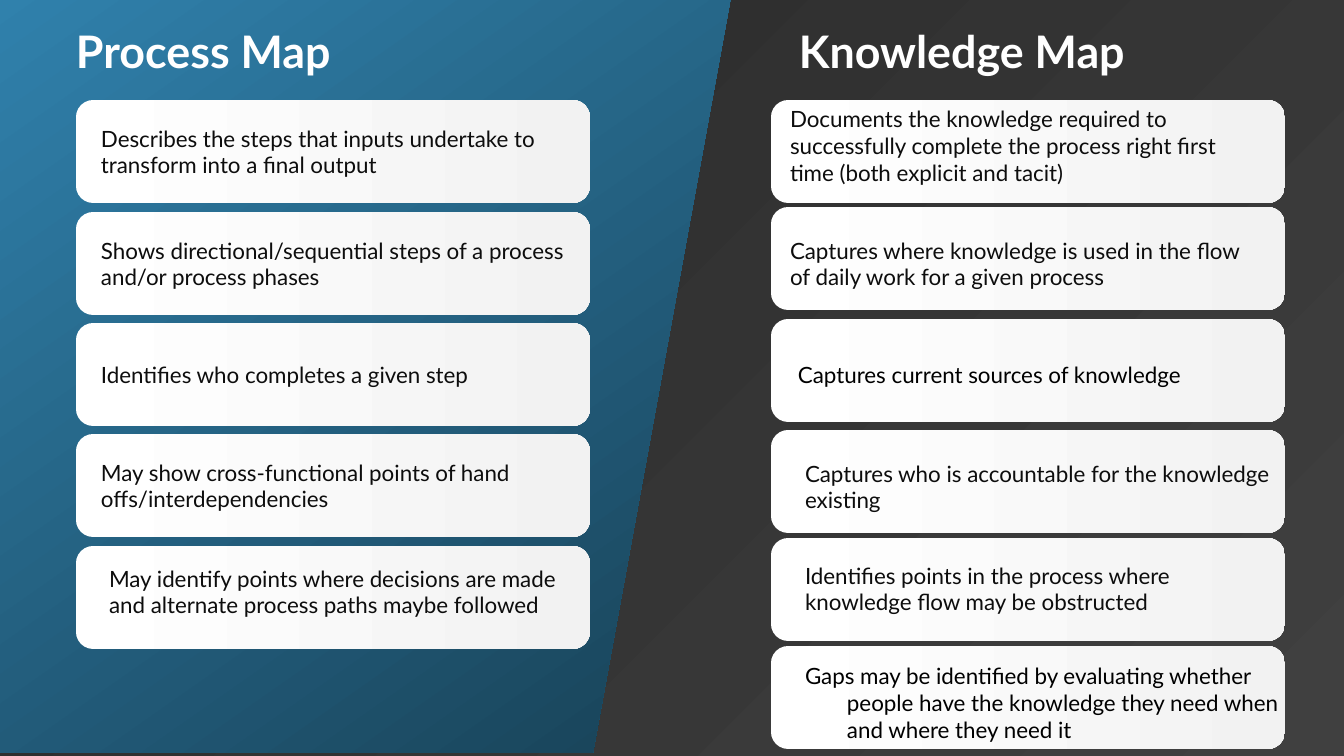
from pptx import Presentation
from pptx.dml.color import RGBColor
from pptx.enum.shapes import MSO_SHAPE
from pptx.enum.text import MSO_ANCHOR, MSO_AUTO_SIZE, PP_ALIGN
from pptx.util import Emu, Pt

ROUNDED = MSO_SHAPE.ROUNDED_RECTANGLE
MIDDLE = MSO_ANCHOR.MIDDLE
NO_AUTOFIT = MSO_AUTO_SIZE.NONE
LEFT, RIGHT = PP_ALIGN.LEFT, PP_ALIGN.RIGHT

WHITE = RGBColor(0xFF, 0xFF, 0xFF)
PALE_GREY = RGBColor(0xF2, 0xF2, 0xF2)
BLACK = RGBColor(0x00, 0x00, 0x00)
INK = RGBColor(0x0D, 0x0D, 0x0D)
CHARCOAL = RGBColor(0x26, 0x26, 0x26)
GREY = RGBColor(0x40, 0x40, 0x40)
BLUE = RGBColor(0x30, 0x81, 0xAC)
NAVY = RGBColor(0x18, 0x41, 0x56)

FONT = "Lato"
PX = 914400 / 100.8
SLIDE_W, SLIDE_H = 1344, 756
CARD_W, CARD_H = 514, 103
STATEMENT_H = 61
HANGING = 42

PROCESS_PITCH = 111.5
PROCESS_STATEMENTS = [
    (25, 21, 466, "Describes the steps that inputs undertake to transform into a final output"),
    (25, 21, 466, "Shows directional/sequential steps of a process and/or process phases"),
    (25, 21, 466, "Identifies who completes a given step"),
    (25, 21, 475, "May show cross-functional points of hand offs/interdependencies"),
    (33, 15, 475, "May identify points where decisions are made and alternate process paths maybe followed"),
]
PROCESS_CARDS = [
    (round(PROCESS_PITCH * row), *statement, False)
    for row, statement in enumerate(PROCESS_STATEMENTS)
]
KNOWLEDGE_CARDS = [
    (0, 19, 15, 475, "Documents the knowledge required to successfully complete the process "
     "right first time (both explicit and tacit)", False),
    (107, 19, 26, 475, "Captures where knowledge is used in the flow of daily work for a given process", False),
    (219, 27, 25, 475, "Captures current sources of knowledge", True),
    (330, 34, 26, 475, "Captures who is accountable for the knowledge existing", False),
    (438, 34, 20, 475, "Identifies points in the process where knowledge flow may be obstructed", False),
    (546, 34, 26, 475, "Gaps may be identified by evaluating whether people have the knowledge "
     "they need when and where they need it", True),
]


def px(length):
    return Emu(round(length * PX))


def box_of(*lengths):
    return [px(length) for length in lengths]


def shade(fill, first, last, clockwise, start=0):
    fill.gradient()
    fill.gradient_angle = (360 - clockwise) % 360
    for stop, color, position in zip(fill.gradient_stops, (first, last), (start, 1)):
        stop.color.rgb = color
        stop.position = position


def write(holder, text, size=16, color=INK, bold=False, align=LEFT, hanging=0):
    frame = holder.text_frame
    frame.word_wrap = True
    frame.auto_size = NO_AUTOFIT
    frame.vertical_anchor = MIDDLE
    frame.margin_left = frame.margin_right = frame.margin_top = frame.margin_bottom = 0
    paragraph = frame.paragraphs[0]
    paragraph.alignment = align
    paragraph.space_before = Pt(0)
    if hanging:
        properties = paragraph._p.get_or_add_pPr()
        properties.set("marL", str(px(hanging)))
        properties.set("indent", str(px(-hanging)))
    run = paragraph.add_run()
    run.text = text
    run.font.name = FONT
    run.font.size = Pt(size)
    run.font.bold = bold
    run.font.color.rgb = color


def add_backdrop(slide):
    shade(slide.background.fill, CHARCOAL, GREY, 45)
    outline = slide.shapes.build_freeform(-2, -3, scale=PX)
    outline.add_line_segments([(731, -3), (593, 753), (-2, 753)], close=True)
    panel = outline.convert_to_shape()
    panel.shadow.inherit = False
    panel.line.fill.background()
    shade(panel.fill, BLUE, NAVY, 55)


def place_heading(heading, left, top, width, height, text, align):
    heading.left, heading.top, heading.width, heading.height = box_of(left, top, width, height)
    heading.element.getparent().append(heading.element)
    write(heading, text, size=32, color=WHITE, bold=True, align=align)


def add_card_column(slide, left, top, cards):
    for offset, inset, drop, width, text, is_hanging in cards:
        card_top = top + offset
        card = slide.shapes.add_shape(ROUNDED, *box_of(left, card_top, CARD_W, CARD_H))
        card.shadow.inherit = False
        card.line.fill.background()
        shade(card.fill, WHITE, PALE_GREY, 0, start=0.01)
        statement = slide.shapes.add_textbox(
            *box_of(left + inset, card_top + drop, width, STATEMENT_H))
        write(statement, text, color=BLACK if is_hanging else INK,
              hanging=HANGING if is_hanging else 0)


def build_comparison(deck):
    slide = deck.slides.add_slide(deck.slide_layouts.get_by_name("Comparison"))
    process_heading, knowledge_heading, *unused = list(slide.placeholders)
    for placeholder in unused:
        placeholder.element.getparent().remove(placeholder.element)
    add_backdrop(slide)
    place_heading(process_heading, 76, 22, 342, 58, "Process Map", LEFT)
    place_heading(knowledge_heading, 730, 22, 395, 58, "Knowledge Map", RIGHT)
    add_card_column(slide, 76, 100, PROCESS_CARDS)
    add_card_column(slide, 771, 100, KNOWLEDGE_CARDS)


def main():
    deck = Presentation()
    deck.slide_width, deck.slide_height = box_of(SLIDE_W, SLIDE_H)
    build_comparison(deck)
    deck.save("out.pptx")


if __name__ == "__main__":
    main()
